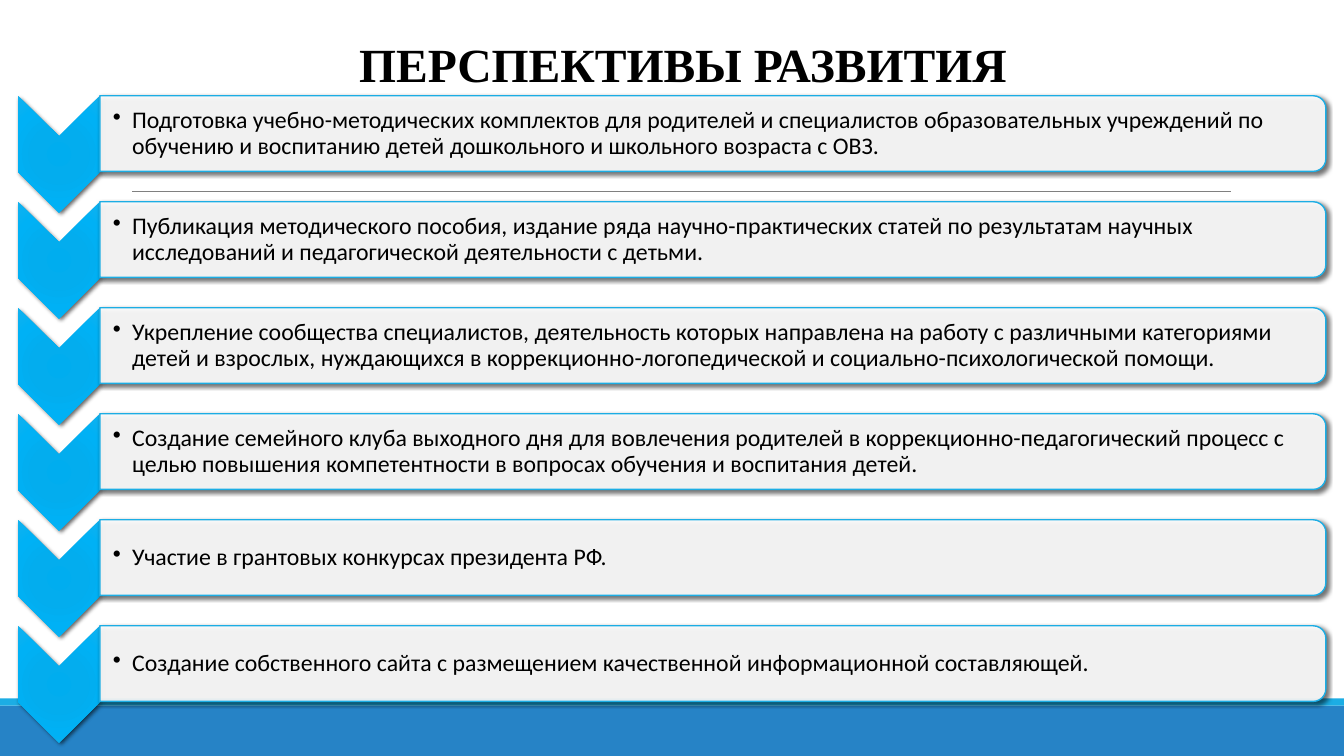
from lxml import etree
from pptx import Presentation
from pptx.dml.color import RGBColor
from pptx.enum.shapes import MSO_CONNECTOR, MSO_SHAPE
from pptx.enum.text import MSO_ANCHOR, PP_ALIGN
from pptx.oxml.ns import qn
from pptx.util import Inches, Pt

RECTANGLE = MSO_SHAPE.RECTANGLE
CHEVRON = MSO_SHAPE.CHEVRON
ROUND_TOP = MSO_SHAPE.ROUND_2_SAME_RECTANGLE
STRAIGHT = MSO_CONNECTOR.STRAIGHT
MIDDLE = MSO_ANCHOR.MIDDLE
CENTER = PP_ALIGN.CENTER

BLACK = RGBColor(0x00, 0x00, 0x00)
WHITE = RGBColor(0xFF, 0xFF, 0xFF)
GRAY = RGBColor(0x80, 0x80, 0x80)
BLUE = RGBColor(0x26, 0x83, 0xC6)
CYAN = RGBColor(0x1C, 0xAD, 0xE4)
CHEVRON_STOPS = [
    (0, RGBColor(0x00, 0xAD, 0xEF)),
    (34, RGBColor(0x03, 0xAD, 0xEE)),
    (70, RGBColor(0x00, 0xB1, 0xF5)),
    (100, RGBColor(0x12, 0xB1, 0xEE)),
]

PAGE_WIDTH, PAGE_HEIGHT = 13.33, 7.5
TITLE = "ПЕРСПЕКТИВЫ РАЗВИТИЯ"
PROSPECTS = [
    "Подготовка учебно-методических комплектов для родителей и специалистов образовательных учреждений по обучению и воспитанию детей дошкольного и школьного возраста с ОВЗ.",
    "Публикация методического пособия, издание ряда научно-практических статей по результатам научных исследований и педагогической деятельности с детьми.",
    "Укрепление сообщества специалистов, деятельность которых направлена на работу с различными категориями детей и взрослых, нуждающихся в коррекционно-логопедической и социально-психологической помощи.",
    "Создание семейного клуба выходного дня для вовлечения родителей в коррекционно-педагогический процесс с целью повышения компетентности в вопросах обучения и воспитания детей.",
    "Участие в грантовых конкурсах президента РФ.",
    "Создание собственного сайта с размещением качественной информационной составляющей.",
]


def add_element(parent, tag, **attributes):
    return etree.SubElement(parent, qn(tag), attributes)


def add_color(parent, color, alpha=None):
    element = add_element(parent, "a:srgbClr", val=str(color))
    if alpha is not None:
        add_element(element, "a:alpha", val=str(alpha * 1000))


def add_shadow(shape):
    effects = shape._element.spPr.find(qn("a:effectLst"))
    shadow = add_element(effects, "a:outerShdw", blurRad=str(Pt(3)), dist=str(Pt(2)),
                         dir=str(45 * 60000), algn="ctr", rotWithShape="0")
    add_color(shadow, BLACK, 60)


def set_gradient(shape):
    solid = shape._element.spPr.find(qn("a:solidFill"))
    gradient = etree.Element(qn("a:gradFill"), rotWithShape="1")
    stops = add_element(gradient, "a:gsLst")
    for position, color in CHEVRON_STOPS:
        add_color(add_element(stops, "a:gs", pos=str(position * 1000)), color)
    circle = add_element(gradient, "a:path", path="circle")
    add_element(circle, "a:fillToRect", **dict.fromkeys("ltrb", "100000"))
    solid.getparent().replace(solid, gradient)


def add_block(page, kind, left, top, width, height, color):
    shape = page.shapes.add_shape(kind, Inches(left), Inches(top), Inches(width), Inches(height))
    shape.shadow.inherit = False
    shape.fill.solid()
    shape.fill.fore_color.rgb = color
    shape.line.fill.background()
    return shape


def add_turned_block(page, kind, left, top, width, height, color):
    shift = (width - height) / 2
    shape = add_block(page, kind, left + shift, top - shift, height, width, color)
    shape.rotation = 90
    add_shadow(shape)
    return shape


def add_text(page, text, left, top, width, height, insets, font_name, size):
    box = page.shapes.add_textbox(Inches(left), Inches(top), Inches(width), Inches(height))
    frame = box.text_frame
    frame.word_wrap = True
    frame.vertical_anchor = MIDDLE
    frame.margin_left, frame.margin_top, frame.margin_right, frame.margin_bottom = map(Inches, insets)
    para = frame.paragraphs[0]
    para.text = text
    para.line_spacing = 0.9
    para.font.name = font_name
    para.font.size = Pt(size)
    para.font.color.rgb = BLACK
    return para


def add_backdrop(page):
    add_block(page, RECTANGLE, 0, 7, PAGE_WIDTH, 0.5, BLUE)
    add_block(page, RECTANGLE, 0, 6.93, PAGE_WIDTH, 0.07, CYAN)
    rule = page.shapes.add_connector(STRAIGHT, Inches(1.31), Inches(1.9), Inches(12.21), Inches(1.9))
    rule.line.color.rgb = GRAY
    rule.line.width = Pt(0.5)
    add_element(rule._element.spPr, "a:effectLst")


def add_prospect(page, text, left, top, width):
    chevron_width, bar_height = 0.81, 0.75
    chevron = add_turned_block(page, CHEVRON, left, top, chevron_width, 1.16, CYAN)
    set_gradient(chevron)

    bar_left, bar_width = left + chevron_width, width - chevron_width
    bar = add_turned_block(page, ROUND_TOP, bar_left, top, bar_width, bar_height, WHITE)
    bar.line.color.rgb = CYAN
    bar.line.width = Pt(1)
    bar_color = bar._element.spPr.find(qn("a:solidFill"))[0]
    add_element(bar_color, "a:alpha", val="90000")

    para = add_text(page, text, bar_left, top + 0.04, bar_width - 0.04, bar_height - 0.07,
                    (0.13, 0.01, 0.01, 0.01), "Calibri", 17)
    properties = para._p.get_or_add_pPr()
    properties.set("marL", str(Inches(0.19)))
    properties.set("indent", str(Inches(-0.19)))
    bullet = etree.Element(qn("a:buChar"), char="•")
    properties.find(qn("a:lnSpc")).addnext(bullet)


def add_prospect_list(page, left, top, width, height):
    pitch = height / len(PROSPECTS)
    for index, text in enumerate(PROSPECTS):
        add_prospect(page, text, left, top + index * pitch, width)


def add_title(page, left, top, width, height):
    para = add_text(page, TITLE, left, top, width, height,
                    (0.12, 0.06, 0.12, 0.06), "Times New Roman", 34)
    para.alignment = CENTER
    para.font.bold = True


def main():
    deck = Presentation()
    deck.slide_width = Inches(PAGE_WIDTH)
    deck.slide_height = Inches(PAGE_HEIGHT)
    page = deck.slides.add_slide(deck.slide_layouts[6])
    add_backdrop(page)
    add_prospect_list(page, 0.18, 0.95, 12.97, 6.31)
    add_title(page, 0.11, 0.26, PAGE_WIDTH, 0.81)
    deck.save("out.pptx")


if __name__ == "__main__":
    main()
